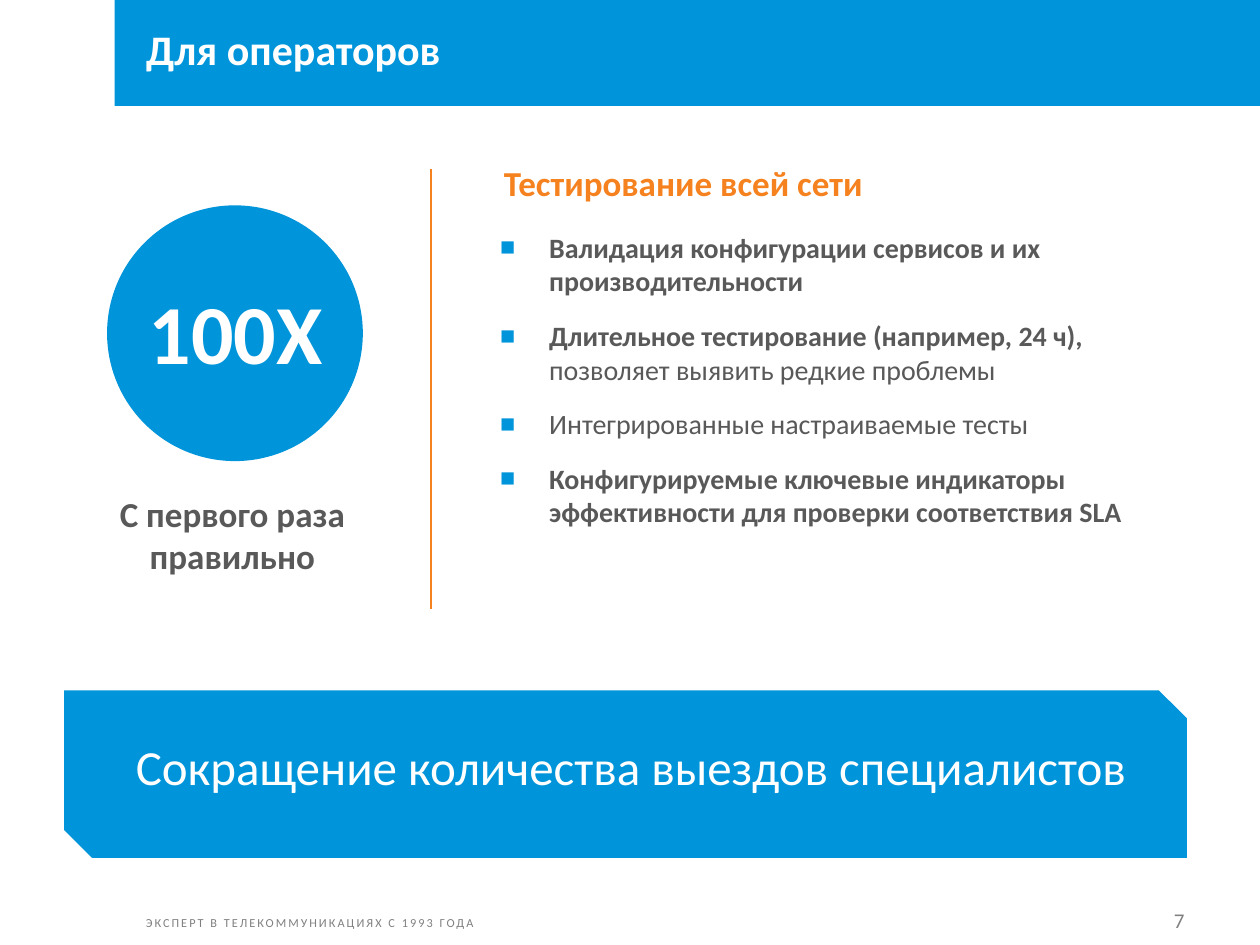
from lxml import etree
from pptx import Presentation
from pptx.dml.color import RGBColor
from pptx.enum.shapes import MSO_CONNECTOR, MSO_SHAPE
from pptx.enum.text import MSO_ANCHOR, MSO_AUTO_SIZE, PP_ALIGN
from pptx.oxml.ns import qn
from pptx.util import Inches, Pt

LEFT, CENTER, RIGHT = PP_ALIGN.LEFT, PP_ALIGN.CENTER, PP_ALIGN.RIGHT
TOP, BOTTOM = MSO_ANCHOR.TOP, MSO_ANCHOR.BOTTOM
TITLE_ONLY = 5

# Content
TITLE = "Для операторов"
HEADING = "Тестирование всей сети"
FIGURE = "100X"
CAPTION = "С первого раза правильно"
MESSAGE = "Сокращение количества выездов специалистов"
FOOTER = "ЭКСПЕРТ В ТЕЛЕКОММУНИКАЦИЯХ С 1993 ГОДА"
PAGE_NUMBER = "7"
# Each bullet is a list of lines: (text, bold)
BULLETS = [
    [("Валидация конфигурации сервисов и их производительности", True)],
    [("Длительное тестирование (например, 24 ч),", True),
     ("позволяет выявить редкие проблемы", False)],
    [("Интегрированные настраиваемые тесты", False)],
    [("Конфигурируемые ключевые индикаторы эффективности "
      "для проверки соответствия SLA", True)],
]

THEME = {
    "font": "Calibri",
    "blue": "0095DA", "orange": "F5821E", "white": "FFFFFF",
    "text": "595959", "muted": "808080",
    "figure": 48, "message": 28, "title": 24, "heading": 20,
    "body": 16, "number": 12, "footer": 7,
}


def color(name):
    return RGBColor.from_string(THEME[name])


def place(shape, left, top, width, height):
    shape.left, shape.top = Inches(left), Inches(top)
    shape.width, shape.height = Inches(width), Inches(height)


def style(font, size, ink, bold=None):
    font.name = THEME["font"]
    font.size = Pt(THEME[size])
    font.color.rgb = color(ink)
    font.bold = bold


def set_frame(shape, anchor=TOP):
    frame = shape.text_frame
    frame.word_wrap = True
    frame.auto_size = MSO_AUTO_SIZE.NONE
    frame.vertical_anchor = anchor
    return frame


def add_block(page, kind, *area):
    block = page.shapes.add_shape(kind, *map(Inches, area))
    block.shadow.inherit = False
    block.fill.solid()
    block.fill.fore_color.rgb = color("blue")
    block.line.fill.background()
    return block


def write(shape, text, size, ink, bold=False, align=LEFT, anchor=TOP):
    para = set_frame(shape, anchor).paragraphs[0]
    para.text = text
    para.alignment = align
    style(para.font, size, ink, bold)
    return para


def add_text(page, area, *args, **options):
    box = page.shapes.add_textbox(*map(Inches, area))
    return write(box, *args, **options)


def add_bullet_mark(para):
    properties = para._p.get_or_add_pPr()
    indent = Inches(0.39)
    properties.set("marL", str(indent))
    properties.set("indent", str(-indent))
    mark_color = etree.SubElement(properties, qn("a:buClr"))
    etree.SubElement(mark_color, qn("a:srgbClr"), val=THEME["blue"])
    etree.SubElement(properties, qn("a:buSzPct"), val="90000")
    etree.SubElement(properties, qn("a:buFont"), typeface="Arial")
    etree.SubElement(properties, qn("a:buChar"), char="■")


def add_bullets(page, area, bullets):
    frame = set_frame(page.shapes.add_textbox(*map(Inches, area)))
    for index, lines in enumerate(bullets):
        para = frame.add_paragraph() if index else frame.paragraphs[0]
        add_bullet_mark(para)
        para.space_before = Pt(12 if index else 0)
        style(para.font, "body", "text")
        for number, (text, bold) in enumerate(lines):
            if number:
                para.add_line_break()
            span = para.add_run()
            span.text = text
            span.font.bold = bold


def main():
    deck = Presentation()
    deck.slide_width, deck.slide_height = Inches(10), Inches(7.5)
    page = deck.slides.add_slide(deck.slide_layouts[TITLE_ONLY])

    # Header bar, behind the title
    title = page.shapes.title
    bar = add_block(page, MSO_SHAPE.RECTANGLE, 0.91, 0, 9.09, 0.84)
    title.element.addprevious(bar.element)
    place(title, 1.06, 0.14, 8.36, 0.62)
    write(title, TITLE, "title", "white", bold=True)

    # Left column: figure in a circle, with its caption
    add_block(page, MSO_SHAPE.OVAL, 0.85, 1.63, 2.03, 2.03)
    add_text(page, (1.03, 2.18, 1.68, 0.91), FIGURE, "figure", "white",
             bold=True, align=CENTER)
    add_text(page, (0.43, 3.86, 2.83, 0.91), CAPTION, "heading", "text",
             bold=True, align=CENTER)

    # Divider
    divider = page.shapes.add_connector(
        MSO_CONNECTOR.STRAIGHT, *map(Inches, (3.42, 1.34, 3.42, 4.83)))
    divider.line.color.rgb = color("orange")
    divider.line.width = Pt(1)
    etree.SubElement(divider.element.spPr, qn("a:effectLst"))

    # Right column: heading and bullets
    add_text(page, (3.9, 1.23, 5.48, 0.4), HEADING, "heading", "orange", bold=True)
    add_bullets(page, (3.87, 1.78, 5.55, 3.54), BULLETS)

    # Message banner
    add_block(page, MSO_SHAPE.SNIP_2_DIAG_RECTANGLE, 0.51, 5.48, 8.91, 1.33)
    add_text(page, (0.98, 5.8, 8.19, 0.57), MESSAGE, "message", "white")

    # Footer and page number
    footer = add_text(page, (1.06, 7.21, 7.08, 0.22), FOOTER, "footer", "muted",
                      anchor=BOTTOM)
    footer.runs[0].font._element.set("spc", "120")
    add_text(page, (8.78, 7.05, 0.72, 0.4), PAGE_NUMBER, "number", "muted",
             align=RIGHT, anchor=BOTTOM)

    deck.save("out.pptx")


if __name__ == "__main__":
    main()
